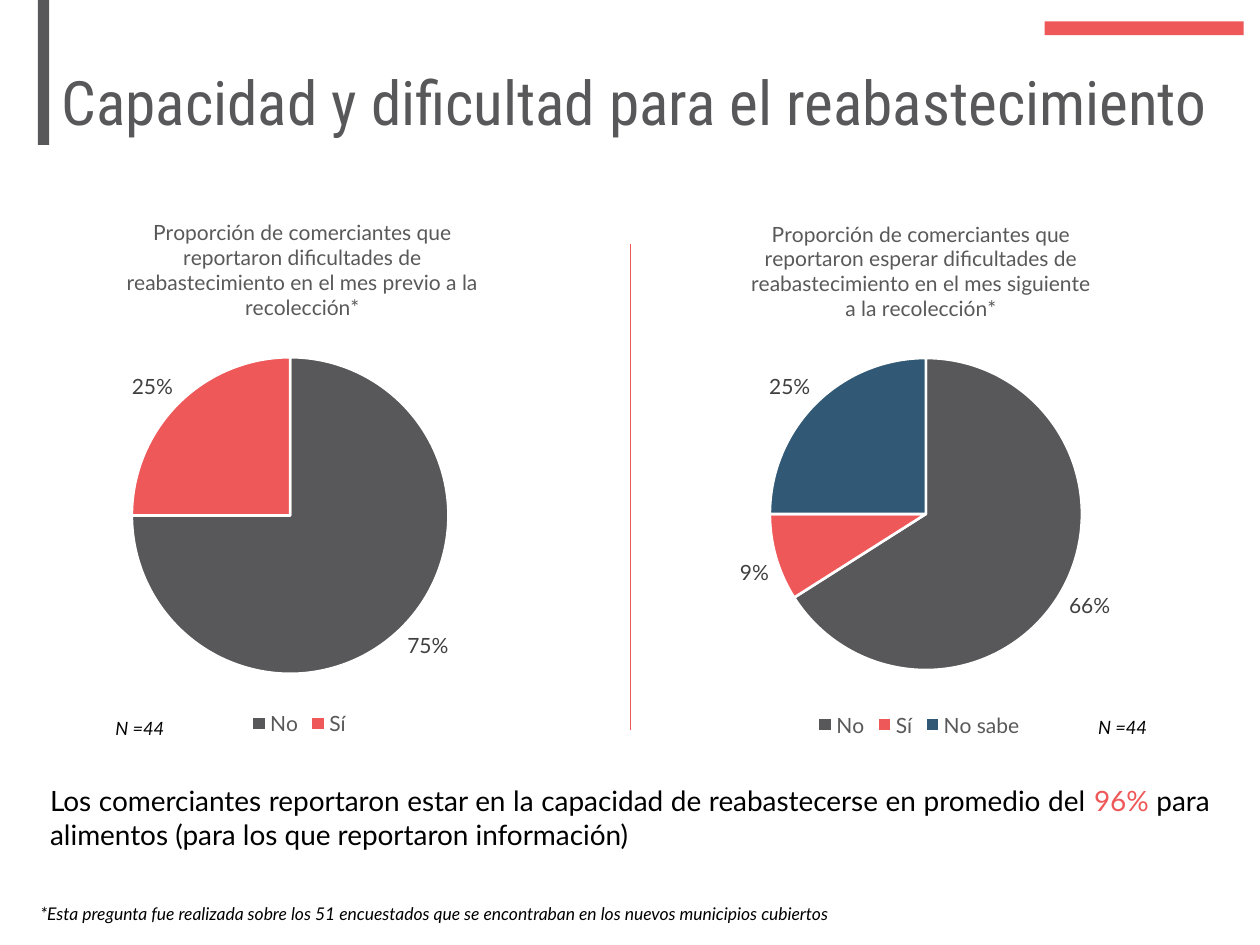
import pptx
import pptx.util
import pptx.chart.data
import pptx.dml.color
import pptx.enum.chart
import pptx.enum.shapes
import pptx.enum.text
import pptx.oxml
import pptx.oxml.ns
from pptx.util import Inches

COLORS = {"gray": "58585A", "red": "EE5859", "blue": "315975", "black": "000000",
          "white": "FFFFFF", "legend": "595959", "label": "404040"}
BODY_FONT = "Lato"
TITLE_FONT = "Roboto Condensed"
ALIGN = pptx.enum.text.PP_ALIGN


def rgb(name):
    return pptx.dml.color.RGBColor.from_string(COLORS[name])


def style_font(font, size, color, face=BODY_FONT, italic=False):
    font.name = face
    font.size = pptx.util.Pt(size)
    font.color.rgb = rgb(color)
    font.bold = False
    font.italic = italic


def add_runs(paragraph, runs, size, **style):
    for text, color in runs:
        run = paragraph.add_run()
        run.text = text
        style_font(run.font, size, color, **style)


def add_bar(slide, box, color):
    bar = slide.shapes.add_shape(pptx.enum.shapes.MSO_SHAPE.RECTANGLE, *map(Inches, box))
    bar.shadow.inherit = False
    bar.fill.solid()
    bar.fill.fore_color.rgb = rgb(color)
    bar.line.fill.background()


def add_heading(slide, box, text):
    heading = slide.shapes.title
    heading.left, heading.top, heading.width, heading.height = map(Inches, box)
    frame = heading.text_frame
    frame.word_wrap = True
    frame.auto_size = pptx.enum.text.MSO_AUTO_SIZE.NONE
    frame.vertical_anchor = pptx.enum.text.MSO_ANCHOR.MIDDLE
    paragraph = frame.paragraphs[0]
    paragraph.alignment = ALIGN.LEFT
    paragraph.line_spacing = 0.9
    add_runs(paragraph, [(text, "gray")], 35, face=TITLE_FONT)


def add_text(slide, box, runs, size, align=ALIGN.LEFT, italic=False, insets=(0.07, 0.04)):
    frame = slide.shapes.add_textbox(*map(Inches, box)).text_frame
    frame.word_wrap = True
    frame.margin_left = frame.margin_right = Inches(insets[0])
    frame.margin_top = frame.margin_bottom = Inches(insets[1])
    frame.paragraphs[0].alignment = align
    add_runs(frame.paragraphs[0], runs, size, italic=italic)


def set_layout(parent, index, **settings):
    """Give a chart part a manual layout, in fractions of the chart area."""
    for old in parent.findall(pptx.oxml.ns.qn("c:layout")):
        parent.remove(old)
    values = "".join(f'<c:{key} val="{value}"/>' for key, value in settings.items())
    parent.insert(index, pptx.oxml.parse_xml(
        f'<c:layout {pptx.oxml.ns.nsdecls("c")}><c:manualLayout>{values}'
        '</c:manualLayout></c:layout>'))


def add_pie(slide, box, title, title_x, plot_box, shares):
    data = pptx.chart.data.CategoryChartData(number_format="0%")
    data.categories = [answer for answer, _, _ in shares]
    data.add_series("Proporción", [share for _, share, _ in shares])
    chart = slide.shapes.add_chart(
        pptx.enum.chart.XL_CHART_TYPE.PIE, *map(Inches, box), data).chart
    style_font(chart.font, 10, "black")

    # Title
    chart.has_title = True
    paragraph = chart.chart_title.text_frame.paragraphs[0]
    paragraph.alignment = ALIGN.CENTER
    add_runs(paragraph, [(title, "legend")], 12)
    chart.chart_title.include_in_layout = False

    # Legend
    chart.has_legend = True
    chart.legend.position = pptx.enum.chart.XL_LEGEND_POSITION.BOTTOM
    chart.legend.include_in_layout = False
    style_font(chart.legend.font, 12, "legend")

    # Slices and labels
    plot = chart.plots[0]
    plot.vary_by_categories = True
    for index, (_, _, color) in enumerate(shares):
        point = plot.series[0].points[index].format
        point.fill.solid()
        point.fill.fore_color.rgb = rgb(color)
        point.line.color.rgb = rgb("white")
        point.line.width = pptx.util.Pt(1.5)
    plot.has_data_labels = True
    labels = plot.data_labels
    labels.show_value = True
    labels.show_percentage = False
    labels.number_format = "0%"
    labels.number_format_is_linked = False
    labels.position = pptx.enum.chart.XL_LABEL_POSITION.OUTSIDE_END
    style_font(labels.font, 12, "label")

    # Placement of title and pie
    chart_xml = chart.element if hasattr(chart, "element") else chart._chartSpace
    set_layout(chart_xml.xpath("c:chart/c:title")[0], 1,
               xMode="edge", yMode="edge", x=title_x, y=0.04)
    x, y, width, height = plot_box
    set_layout(chart_xml.xpath("c:chart/c:plotArea")[0], 0, layoutTarget="inner",
               xMode="edge", yMode="edge", x=x, y=y, w=width, h=height)


def add_divider(slide, x, top, bottom):
    divider = slide.shapes.add_connector(
        pptx.enum.shapes.MSO_CONNECTOR.STRAIGHT, *map(Inches, (x, top, x, bottom)))
    divider.line.color.rgb = rgb("red")
    divider.line.width = pptx.util.Pt(0.5)
    divider.element.spPr.append(
        pptx.oxml.parse_xml(f'<a:effectLst {pptx.oxml.ns.nsdecls("a")}/>'))


def main():
    deck = pptx.Presentation()
    deck.slide_width, deck.slide_height = Inches(10), Inches(7.5)
    slide = deck.slides.add_slide(deck.slide_layouts.get_by_name("Title Only"))

    # Header
    add_bar(slide, (8.29, 0.17, 1.58, 0.11), "red")
    add_bar(slide, (0.3, 0, 0.09, 1.15), "gray")
    add_heading(slide, (0.39, 0.5, 9.4, 0.67), "Capacidad y dificultad para el reabastecimiento")

    # Past and expected difficulties
    add_pie(slide, (0.58, 1.52, 3.59, 4.36),
            "Proporción de comerciantes que reportaron dificultades de "
            "reabastecimiento en el mes previo a la recolección*",
            0.11, (0.13, 0.3, 0.7, 0.58),
            [("No", 0.75, "gray"), ("Sí", 0.25, "red")])
    add_pie(slide, (5.5, 1.53, 3.59, 4.36),
            "Proporción de comerciantes que reportaron esperar dificultades de "
            "reabastecimiento en el mes siguiente a la recolección*",
            0.12, (0.17, 0.3, 0.69, 0.57),
            [("No", 0.66, "gray"), ("Sí", 0.09, "red"), ("No sabe", 0.25, "blue")])
    add_divider(slide, 5, 1.94, 5.79)
    for left, top in ((0.8, 5.65), (8.6, 5.64)):
        add_text(slide, (left, top, 0.62, 0.29), [("N =44", "black")], 10.5,
                 ALIGN.CENTER, italic=True)

    # Conclusion and footnote
    add_text(slide, (0.3, 6.17, 9.4, 0.64),
             [("Los comerciantes reportaron estar en la capacidad de reabastecerse "
               "en promedio del ", "black"),
              ("96% ", "red"),
              ("para alimentos (para los que reportaron información)", "black")],
             16, ALIGN.JUSTIFY, insets=(0.1, 0.05))
    add_text(slide, (0.25, 7.13, 8.82, 0.37),
             [("*Esta pregunta fue realizada sobre los 51 encuestados que se "
               "encontraban en los nuevos municipios cubiertos", "black")],
             10, italic=True)

    deck.save("out.pptx")


if __name__ == "__main__":
    main()
